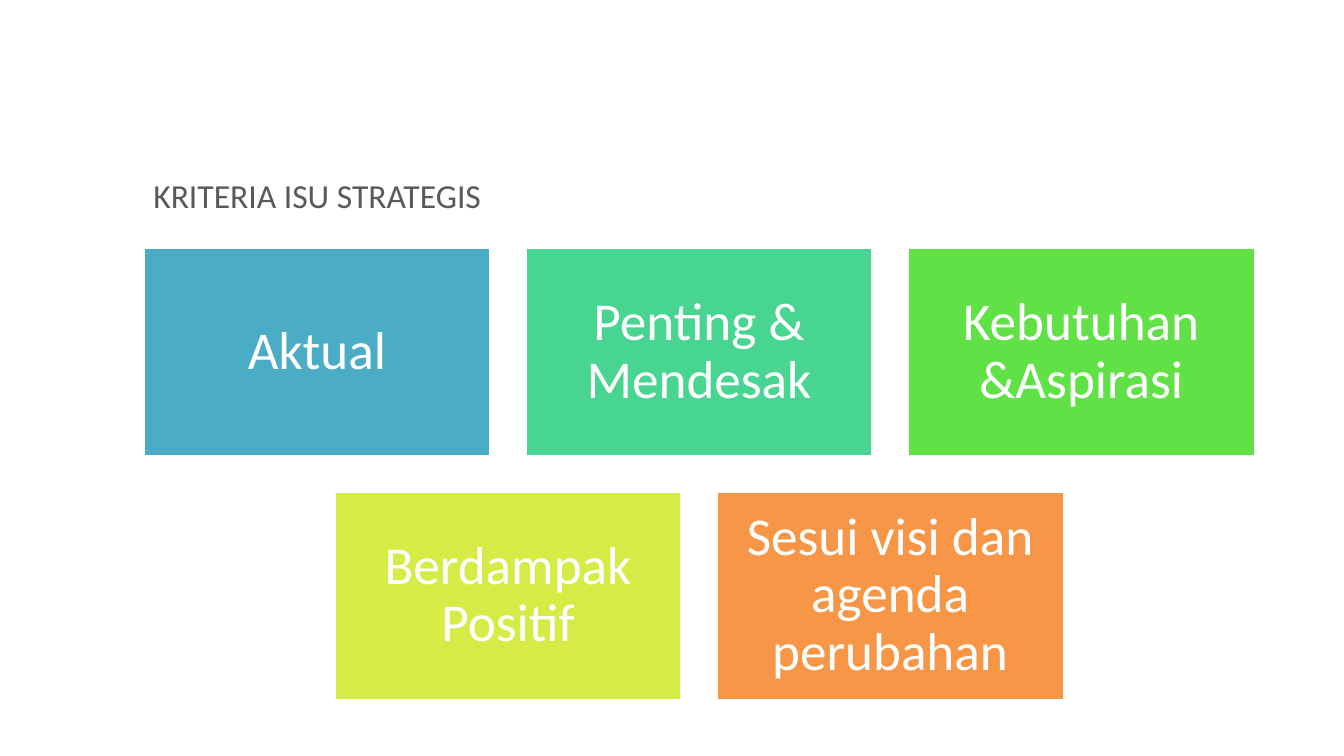
from pptx import Presentation
from pptx.dml.color import RGBColor
from pptx.enum.shapes import MSO_SHAPE
from pptx.enum.text import MSO_ANCHOR, PP_ALIGN
from pptx.util import Cm, Pt

RECT = MSO_SHAPE.RECTANGLE
MIDDLE = MSO_ANCHOR.MIDDLE
LEFT, CENTER = PP_ALIGN.LEFT, PP_ALIGN.CENTER

WHITE = RGBColor(0xFF, 0xFF, 0xFF)
GREY = RGBColor(0x59, 0x59, 0x59)
BLUE = RGBColor(0x4B, 0xAC, 0xC6)
TEAL = RGBColor(0x48, 0xD4, 0x91)
GREEN = RGBColor(0x60, 0xE1, 0x46)
LIME = RGBColor(0xD5, 0xEC, 0x46)
ORANGE = RGBColor(0xF7, 0x96, 0x46)


def write(tf, text, size, color, align=LEFT, spacing=1.0):
    tf.word_wrap = True
    tf.vertical_anchor = MIDDLE
    p = tf.paragraphs[0]
    p.alignment = align
    p.line_spacing = spacing
    r = p.add_run()
    r.text = text
    r.font.name = "Calibri"
    r.font.size = Pt(size)
    r.font.color.rgb = color


prs = Presentation()
prs.slide_width, prs.slide_height = Cm(33.87), Cm(19.05)
s = prs.slides.add_slide(prs.slide_layouts[5])

# Title
title = s.shapes.title
title.left, title.top, title.width, title.height = Cm(3.61), Cm(4.32), Cm(28), Cm(1.2)
write(title.text_frame, "KRITERIA ISU STRATEGIS", 24, GREY)

# Criteria cards: each row is centred on the same axis
CARD_W, CARD_H, GAP = 8.76, 5.26, 0.87
AXIS, TOP = 17.62, 6.25
rows = [
    [("Aktual", BLUE), ("Penting & Mendesak", TEAL), ("Kebutuhan &Aspirasi", GREEN)],
    [("Berdampak Positif", LIME), ("Sesui visi dan agenda perubahan", ORANGE)],
]
for i, row in enumerate(rows):
    left = AXIS - (len(row) * (CARD_W + GAP) - GAP) / 2
    for j, (text, color) in enumerate(row):
        sp = s.shapes.add_shape(RECT, Cm(left + j * (CARD_W + GAP)),
                                Cm(TOP + i * (CARD_H + GAP)), Cm(CARD_W), Cm(CARD_H))
        sp.shadow.inherit = False
        sp.fill.solid()
        sp.fill.fore_color.rgb = color
        sp.line.color.rgb = WHITE
        sp.line.width = Pt(2)
        tf = sp.text_frame
        tf.margin_left = tf.margin_right = tf.margin_top = tf.margin_bottom = Cm(0.4)
        write(tf, text, 38, WHITE, align=CENTER, spacing=0.9)

prs.save("out.pptx")
